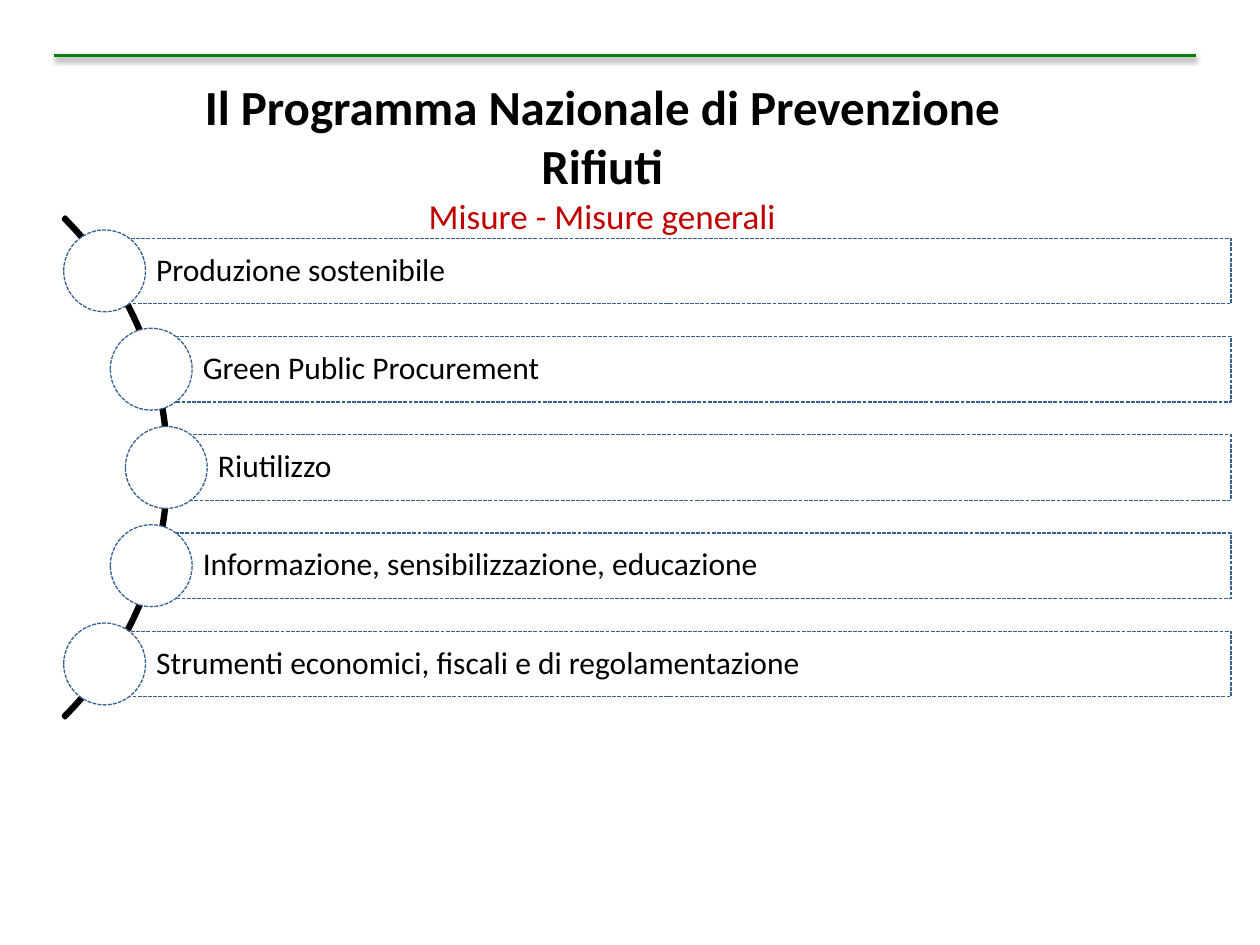
from dataclasses import dataclass

from lxml import etree
from pptx import Presentation
from pptx.dml.color import RGBColor
from pptx.enum.dml import MSO_LINE
from pptx.enum.shapes import MSO_CONNECTOR, MSO_SHAPE
from pptx.enum.text import MSO_ANCHOR, MSO_AUTO_SIZE, PP_ALIGN
from pptx.util import Inches, Pt

ARC, RECT, OVAL = MSO_SHAPE.BLOCK_ARC, MSO_SHAPE.RECTANGLE, MSO_SHAPE.OVAL
DASH = MSO_LINE.SQUARE_DOT
TOP, MIDDLE = MSO_ANCHOR.TOP, MSO_ANCHOR.MIDDLE
LEFT, CENTER = PP_ALIGN.LEFT, PP_ALIGN.CENTER


@dataclass(frozen=True)
class Theme:
    font: str = "Calibri"
    black: str = "000000"
    white: str = "FFFFFF"
    red: str = "C00000"
    blue: str = "376092"
    green: str = "008000"
    head: int = 28
    sub: int = 20
    body: int = 18


THEME = Theme()


def write(para, text, size, color=THEME.black, bold=False, align=LEFT, spacing=1.0):
    para.alignment = align
    para.line_spacing = spacing
    run = para.add_run()
    run.text = text
    font = run.font
    font.name, font.size, font.bold = THEME.font, Pt(size), bold
    font.color.rgb = RGBColor.from_string(color)


def draw(kind, left, top, width, height, line, weight, fill=None):
    shape = slide.shapes.add_shape(
        kind, Inches(left), Inches(top), Inches(width), Inches(height))
    shape.shadow.inherit = False
    if fill:
        shape.fill.solid()
        shape.fill.fore_color.rgb = RGBColor.from_string(fill)
    else:
        shape.fill.background()
    shape.line.color.rgb = RGBColor.from_string(line)
    shape.line.width = Pt(weight)
    return shape


deck = Presentation()
deck.slide_width, deck.slide_height = Inches(10), Inches(7.5)
slide = deck.slides.add_slide(deck.slide_layouts[5])

# Title and subtitle
title = slide.shapes.title
title.left, title.top = Inches(1.13), Inches(0.56)
title.width, title.height = Inches(7.3), Inches(0.91)
frame = title.text_frame
frame.word_wrap = True
frame.auto_size = MSO_AUTO_SIZE.NONE
frame.vertical_anchor = TOP
write(frame.paragraphs[0], "Il Programma Nazionale di Prevenzione Rifiuti",
      THEME.head, bold=True, align=CENTER)
write(frame.add_paragraph(), "Misure - Misure generali",
      THEME.sub, color=THEME.red, align=CENTER)

# Arc behind the list
mid = 3.71
size = 5.62
arc = draw(ARC, -4.28, mid - size / 2, size, size, THEME.black, 2)
for i, value in enumerate((189, 27, 0.004)):
    arc.adjustments[i] = value

# Measures: a bar with a circle centred on its left end
items = [
    (0.83, "Produzione sostenibile"),
    (1.2, "Green Public Procurement"),
    (1.32, "Riutilizzo"),
    (1.2, "Informazione, sensibilizzazione, educazione"),
    (0.83, "Strumenti economici, fiscali e di regolamentazione"),
]
right, pitch, tall, disc = 9.77, 0.78, 0.52, 0.65
for i, (left, text) in enumerate(items):
    y = mid + (i - 2) * pitch
    bar = draw(RECT, left, y - tall / 2, right - left, tall,
               THEME.blue, 0.75, THEME.white)
    dot = draw(OVAL, left - disc / 2, y - disc / 2, disc, disc,
               THEME.blue, 0.75, THEME.white)
    bar.line.dash_style = dot.line.dash_style = DASH
    frame = bar.text_frame
    frame.word_wrap = True
    frame.vertical_anchor = MIDDLE
    frame.margin_left = Inches(0.41)
    frame.margin_top = frame.margin_right = frame.margin_bottom = Inches(0.05)
    write(frame.paragraphs[0], text, THEME.body, spacing=0.9)

# Green rule with a soft shadow
rule = slide.shapes.add_connector(
    MSO_CONNECTOR.STRAIGHT, Inches(0.43), Inches(0.44), Inches(9.49), Inches(0.44))
rule.line.color.rgb = RGBColor.from_string(THEME.green)
rule.line.width = Pt(2)
rule._element.spPr.append(etree.fromstring(
    '<a:effectLst xmlns:a="http://schemas.openxmlformats.org/drawingml/2006/main">'
    f'<a:outerShdw blurRad="{Pt(3.1)}" dist="{Pt(1.6)}" dir="5400000" rotWithShape="0">'
    f'<a:srgbClr val="{THEME.black}"><a:alpha val="38000"/></a:srgbClr>'
    '</a:outerShdw></a:effectLst>'))

deck.save("out.pptx")
